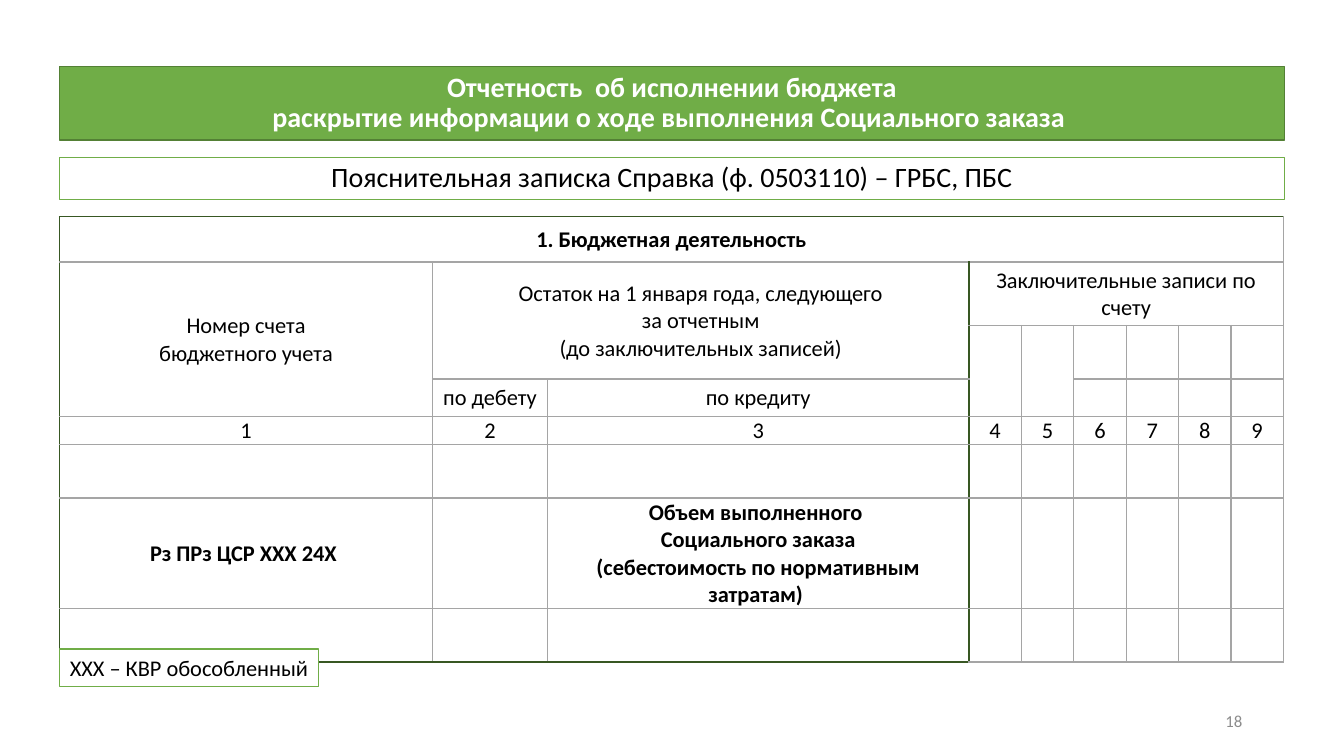
from lxml.etree import SubElement
from pptx import Presentation
from pptx.dml.color import RGBColor
from pptx.enum.shapes import MSO_SHAPE
from pptx.enum.text import MSO_ANCHOR, MSO_AUTO_SIZE, PP_ALIGN
from pptx.oxml.ns import qn
from pptx.util import Inches, Pt

GREEN, DARK, GREY = "70AD47", "385723", "A5A5A5"
LEFT, WIDTH = 0.59, 12.15
COLS = [3.7, 1.14, 4.18] + [0.52] * 6
ROWS = [0.45, 0.63, 0.53, 0.37, 0.25, 0.53, 0.53, 0.53]
MERGES = [(0, 0, 0, 8), (1, 0, 3, 0), (1, 1, 2, 2), (1, 3, 1, 8),
          (2, 3, 3, 3), (2, 4, 3, 4)]
TEXTS = {
    (0, 0): "1. Бюджетная деятельность",
    (1, 0): "Номер счета\vбюджетного учета",
    (1, 1): "Остаток на 1 января года, следующего\vза отчетным\v"
            "(до заключительных записей)",
    (1, 3): "Заключительные записи по счету",
    (3, 1): "по дебету",
    (3, 2): "по кредиту",
    (6, 0): "Рз ПРз ЦСР ХХХ 24Х\u00a0",
    (6, 2): "Объем выполненного \nСоциального заказа\n"
            "(себестоимость по нормативным затратам)\u00a0",
}
TEXTS.update({(4, c): str(c + 1) for c in range(len(COLS))})
BOLD_ROWS = (0, 6)


def rgb(color):
    """Turn a hex string into a colour."""
    return RGBColor.from_string(color)


def write(tf, text, size, color="000000", bold=False, align=PP_ALIGN.CENTER):
    """Fill a text frame with uniformly formatted text."""
    tf.text = text
    for p in tf.paragraphs:
        p.alignment = align
        for r in p.runs:
            r.font.name = "Calibri"
            r.font.size = Pt(size)
            r.font.bold = bold
            r.font.color.rgb = rgb(color)


def add_box(s, top, width, height, text, size, fill="FFFFFF", line=GREEN,
            color="000000", bold=False):
    """Add an outlined rectangle with centred text."""
    sp = s.shapes.add_shape(MSO_SHAPE.RECTANGLE, Inches(LEFT), Inches(top),
                            Inches(width), Inches(height))
    sp.shadow.inherit = False
    sp.fill.solid()
    sp.fill.fore_color.rgb = rgb(fill)
    sp.line.color.rgb = rgb(line)
    sp.line.width = Pt(1)
    tf = sp.text_frame
    tf.word_wrap = True
    tf.vertical_anchor = MSO_ANCHOR.MIDDLE
    write(tf, text, size, color, bold)
    return sp


def set_borders(cell, colors):
    """Draw the cell's borders from a side-to-colour mapping."""
    tcPr = cell._tc.get_or_add_tcPr()
    for side, color in colors.items():
        ln = SubElement(tcPr, qn(f"a:ln{side}"), w=str(Pt(1)))
        fill = SubElement(ln, qn("a:solidFill"))
        SubElement(fill, qn("a:srgbClr"), val=color)


def border_colors(cell, row, col):
    """Choose dark lines for the frame and the closing-entries divider."""
    last_col = col + cell.span_width - 1
    dark = {
        "L": col == 0 or (col == 3 and row > 0),
        "R": last_col == 2 and row > 0,
        "T": row == 0,
        "B": row == len(ROWS) - 1 and col < 3,
    }
    return {side: DARK if on else GREY for side, on in dark.items()}


def add_report_table(s):
    """Add the budget account table."""
    table = s.shapes.add_table(len(ROWS), len(COLS), Inches(LEFT), Inches(2.15),
                               Inches(WIDTH), Inches(sum(ROWS))).table
    table.first_row = table.horz_banding = False
    for column, width in zip(table.columns, COLS):
        column.width = Inches(width)
    for row, height in zip(table.rows, ROWS):
        row.height = Inches(height)
    for r1, c1, r2, c2 in MERGES:
        table.cell(r1, c1).merge(table.cell(r2, c2))
    for row in range(len(ROWS)):
        for col in range(len(COLS)):
            cell = table.cell(row, col)
            cell.margin_left = cell.margin_right = cell.margin_top = Inches(0.01)
            cell.margin_bottom = 0
            cell.vertical_anchor = MSO_ANCHOR.MIDDLE
            set_borders(cell, border_colors(cell, row, col))
            cell.fill.background()
            if (row, col) in TEXTS:
                write(cell.text_frame, TEXTS[row, col], 16, bold=row in BOLD_ROWS)


def add_page_number(s, number):
    """Add the grey page number at the lower right."""
    tf = s.shapes.add_textbox(Inches(9.42), Inches(6.95), Inches(3),
                              Inches(0.4)).text_frame
    tf.word_wrap = True
    tf.vertical_anchor = MSO_ANCHOR.MIDDLE
    write(tf, number, 12, "8C8C8C", align=PP_ALIGN.RIGHT)


def main():
    """Build the slide and save it."""
    prs = Presentation()
    prs.slide_width, prs.slide_height = Inches(13.33), Inches(7.5)
    s = prs.slides.add_slide(prs.slide_layouts[6])
    title = add_box(s, 0.66, WIDTH, 0.73,
                    "Отчетность  об исполнении бюджета\v"
                    "раскрытие информации о ходе выполнения Социального заказа ",
                    20, GREEN, "538035", "FFFFFF", True)
    form = add_box(s, 1.56, WIDTH, 0.42,
                   "Пояснительная записка Справка (ф. 0503110) – ГРБС, ПБС", 20)
    for sp in (title, form):
        sp.text_frame.paragraphs[0].line_spacing = 0.9
    form.text_frame.paragraphs[0].space_before = Pt(10)
    add_report_table(s)
    note = add_box(s, 6.44, 2.57, 0.37, "ХХХ – КВР обособленный", 16)
    note.text_frame.word_wrap = False
    note.text_frame.auto_size = MSO_AUTO_SIZE.SHAPE_TO_FIT_TEXT
    note.text_frame.vertical_anchor = MSO_ANCHOR.TOP
    add_page_number(s, "18")
    prs.save("out.pptx")


if __name__ == "__main__":
    main()
